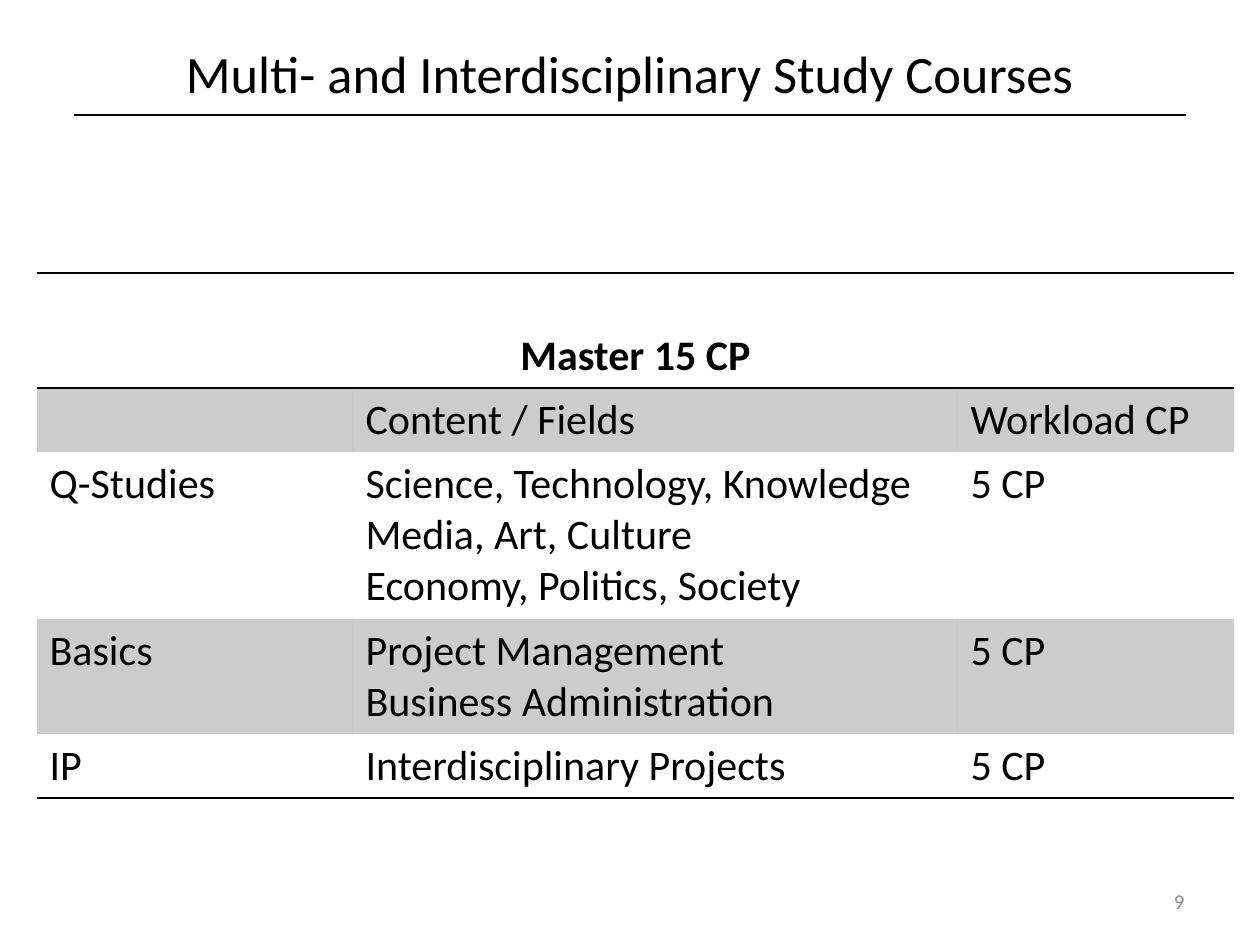
from lxml import etree
from pptx import Presentation
from pptx.dml.color import RGBColor
from pptx.enum.shapes import MSO_CONNECTOR
from pptx.enum.text import MSO_ANCHOR, PP_ALIGN
from pptx.oxml.ns import qn
from pptx.util import Pt

PX = 914400 // 126
BLACK = RGBColor(0x00, 0x00, 0x00)
GREY = RGBColor(0x8C, 0x8C, 0x8C)
LEFT, CENTER, RIGHT = PP_ALIGN.LEFT, PP_ALIGN.CENTER, PP_ALIGN.RIGHT
TOP, MIDDLE, BOTTOM = MSO_ANCHOR.TOP, MSO_ANCHOR.MIDDLE, MSO_ANCHOR.BOTTOM
STRAIGHT = MSO_CONNECTOR.STRAIGHT
NO_STYLE = "{2D5ABB26-0587-4C30-8999-92F81FD0307C}"

TITLE_TEXT = {"size": Pt(30), "name": "Calibri", "bold": False}
NUMBER_TEXT = {"size": Pt(12), "name": "Calibri", "bold": False}
HEAD_TEXT = {"size": Pt(24), "name": "Calibri", "bold": True}
BODY_TEXT = {"size": Pt(24), "name": "Calibri", "bold": False}

COLUMN_WIDTHS = [316, 605, 276]
ROW_HEIGHTS = [115, 64, 167, 115, 64]
COURSES = [
    ["Master 15 CP", "", ""],
    ["", "Content / Fields", "Workload CP"],
    ["Q-Studies", "Science, Technology, Knowledge Media, Art, Culture\nEconomy, Politics, Society", "5 CP"],
    ["Basics", "Project Management\nBusiness Administration", "5 CP"],
    ["IP", "Interdisciplinary Projects", "5 CP"],
]


def write(frame, text, style, color, align):
    """Write each line of text as a styled paragraph."""
    for index, line in enumerate(text.split("\n")):
        para = frame.add_paragraph() if index else frame.paragraphs[0]
        para.alignment = align
        span = para.add_run()
        span.text = line
        span.font.color.rgb = color
        for name, value in style.items():
            setattr(span.font, name, value)


def add_text(page, box, text, style, color, align):
    """Place a wrapped, vertically centred text box."""
    frame = page.shapes.add_textbox(*(n * PX for n in box)).text_frame
    frame.word_wrap = True
    frame.vertical_anchor = MIDDLE
    write(frame, text, style, color, align)


def add_title(page, box):
    """Place the title and the rule beneath it."""
    left, top, width, height = box
    add_text(page, box, "Multi- and Interdisciplinary Study Courses", TITLE_TEXT, BLACK, CENTER)
    rule_y = top + height + 9
    ends = (left + 11, rule_y, left + width - 11, rule_y)
    rule = page.shapes.add_connector(STRAIGHT, *(n * PX for n in ends))
    rule.line.color.rgb = BLACK
    rule.line.width = Pt(0.75)
    etree.SubElement(rule._element.spPr, qn("a:effectLst"))


def add_border(cell, side):
    """Draw a one-point black border on a side of a cell."""
    line = etree.SubElement(cell._tc.get_or_add_tcPr(), qn(f"a:{side}"), w=str(Pt(1)))
    fill = etree.SubElement(line, qn("a:solidFill"))
    etree.SubElement(fill, qn("a:srgbClr"), val=str(BLACK))


def shade(cell):
    """Fill a cell with black at twenty percent opacity."""
    cell.fill.solid()
    cell.fill.fore_color.rgb = BLACK
    color = cell._tc.tcPr.find(f"{qn('a:solidFill')}/{qn('a:srgbClr')}")
    etree.SubElement(color, qn("a:alpha"), val="20000")


def add_courses(page, left, top):
    """Place the table of courses with shaded alternate rows."""
    box = (left, top, sum(COLUMN_WIDTHS), sum(ROW_HEIGHTS))
    shape = page.shapes.add_table(len(ROW_HEIGHTS), len(COLUMN_WIDTHS), *(n * PX for n in box))
    table = shape.table
    table.first_row = table.horz_banding = False
    table._tbl.tblPr.find(qn("a:tableStyleId")).text = NO_STYLE
    for column, width in zip(table.columns, COLUMN_WIDTHS):
        column.width = width * PX
    last = len(COURSES) - 1
    for row_index, (row, height, texts) in enumerate(zip(table.rows, ROW_HEIGHTS, COURSES)):
        row.height = height * PX
        head = row_index == 0
        for cell, text in zip(row.cells, texts):
            cell.vertical_anchor = BOTTOM if head else TOP
            write(cell.text_frame, text, HEAD_TEXT if head else BODY_TEXT, BLACK, CENTER if head else LEFT)
            if head:
                add_border(cell, "lnT")
            if row_index in (0, last):
                add_border(cell, "lnB")
            if row_index % 2:
                shade(cell)
            else:
                cell.fill.background()
    table.cell(0, 0).merge(table.cell(0, len(COLUMN_WIDTHS) - 1))


def main():
    """Build and save the deck."""
    deck = Presentation()
    deck.slide_width, deck.slide_height = 1260 * PX, 945 * PX
    page = deck.slides.add_slide(deck.slide_layouts[6])
    add_courses(page, 37, 273)
    add_title(page, (63, 38, 1134, 68))
    add_text(page, (903, 876, 294, 50), "9", NUMBER_TEXT, GREY, RIGHT)
    deck.save("out.pptx")


if __name__ == "__main__":
    main()
